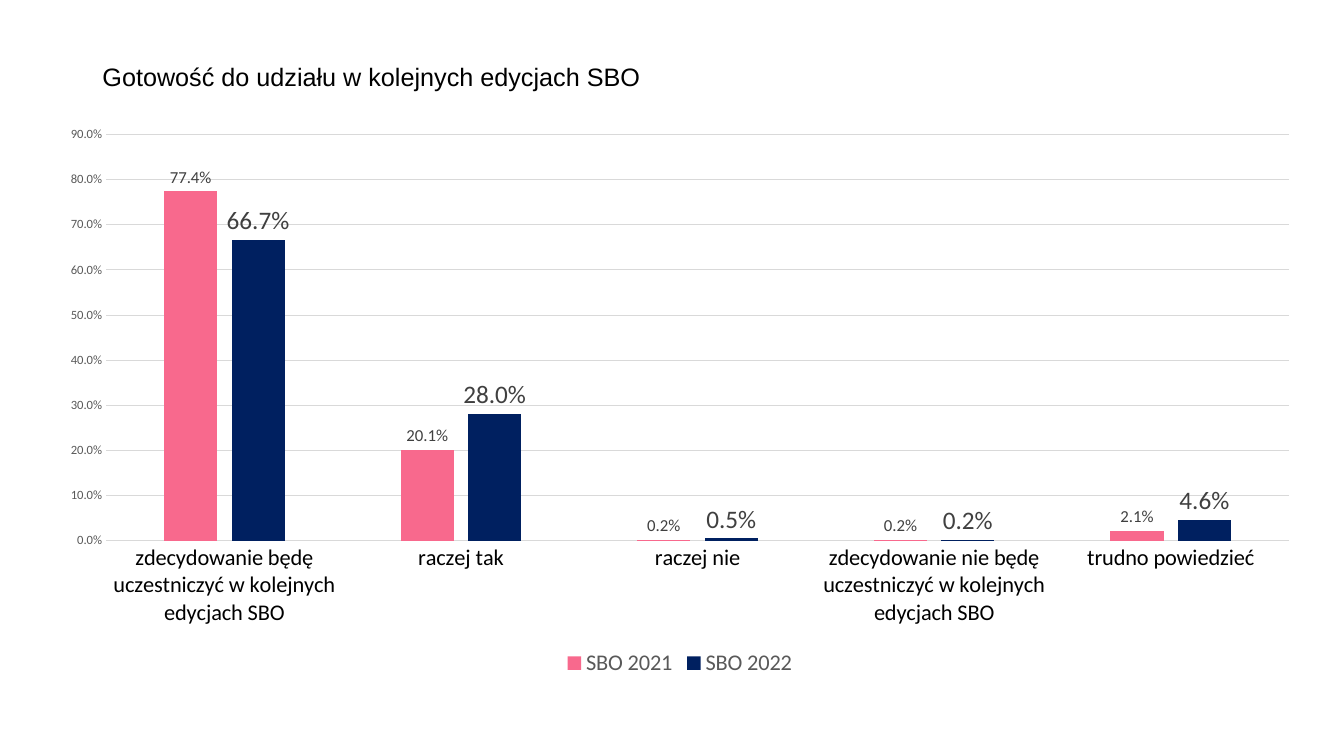
from pptx import Presentation
from pptx.chart.data import CategoryChartData
from pptx.dml.color import RGBColor
from pptx.enum.chart import XL_CHART_TYPE, XL_LABEL_POSITION, XL_LEGEND_POSITION, XL_TICK_MARK
from pptx.enum.text import MSO_ANCHOR, MSO_AUTO_SIZE, PP_ALIGN
from pptx.util import Pt

COLUMNS = XL_CHART_TYPE.COLUMN_CLUSTERED
OUTSIDE = XL_LABEL_POSITION.OUTSIDE_END
BOTTOM = XL_LEGEND_POSITION.BOTTOM
NO_TICK = XL_TICK_MARK.NONE
MIDDLE = MSO_ANCHOR.MIDDLE
NO_FIT = MSO_AUTO_SIZE.NONE
LEFT = PP_ALIGN.LEFT

TITLE = "Gotowość do udziału w kolejnych edycjach SBO"
ANSWERS = [
    "zdecydowanie będę uczestniczyć w kolejnych\nedycjach SBO",
    "raczej tak",
    "raczej nie",
    "zdecydowanie nie będę uczestniczyć w kolejnych\nedycjach SBO",
    "trudno powiedzieć",
]
# name, values, colour, label size
EDITIONS = [
    ("SBO 2021", (0.774, 0.201, 0.002, 0.002, 0.021), "pink", 12),
    ("SBO 2022", (0.667, 0.28, 0.005, 0.002, 0.046), "navy", 18),
]
COLORS = {
    "pink": "F8698D",
    "navy": "002060",
    "black": "000000",
    "label": "404040",
    "muted": "595959",
    "grid": "D9D9D9",
}
PERCENT = "0.0%"
TITLE_BOX = (66, 29, 828, 54)
CHART_BOX = (32.4, 82.8, 906.5, 403.9)


def rgb(name):
    return RGBColor.from_string(COLORS[name])


def style_font(font, size, color, face="Calibri"):
    font.name = face
    font.size = Pt(size)
    font.bold = False
    font.color.rgb = rgb(color)


def style_line(line):
    line.color.rgb = rgb("grid")
    line.width = Pt(0.75)


def add_title(slide):
    sp = slide.shapes.title
    sp.left, sp.top, sp.width, sp.height = map(Pt, TITLE_BOX)
    tf = sp.text_frame
    tf.auto_size = NO_FIT
    tf.vertical_anchor = MIDDLE
    p = tf.paragraphs[0]
    p.alignment = LEFT
    p.line_spacing = 0.9
    r = p.add_run()
    r.text = TITLE
    style_font(r.font, 18, "black", "Arial")


def add_answers_chart(slide):
    data = CategoryChartData(number_format=PERCENT)
    data.categories = ANSWERS
    for name, values, _, _ in EDITIONS:
        data.add_series(name, values)
    chart = slide.shapes.add_chart(COLUMNS, *map(Pt, CHART_BOX), data).chart
    chart.has_title = False
    style_font(chart.font, 10, "black")

    plot = chart.plots[0]
    plot.vary_by_categories = False
    plot.gap_width = 219
    plot.overlap = -27
    for series, (_, _, color, size) in zip(plot.series, EDITIONS):
        series.invert_if_negative = False
        series.format.fill.solid()
        series.format.fill.fore_color.rgb = rgb(color)
        labels = series.data_labels
        labels.show_value = True
        labels.position = OUTSIDE
        labels.number_format = PERCENT
        labels.number_format_is_linked = False
        style_font(labels.font, size, "label")

    answers, shares = chart.category_axis, chart.value_axis
    for axis, size, color in ((answers, 16, "black"), (shares, 9, "muted")):
        axis.major_tick_mark = NO_TICK
        axis.minor_tick_mark = NO_TICK
        style_font(axis.tick_labels.font, size, color)
    style_line(answers.format.line)
    shares.format.line.fill.background()
    shares.minimum_scale, shares.maximum_scale, shares.major_unit = 0, 0.9, 0.1
    shares.tick_labels.number_format = PERCENT
    shares.tick_labels.number_format_is_linked = False
    style_line(shares.major_gridlines.format.line)

    chart.has_legend = True
    chart.legend.position = BOTTOM
    chart.legend.include_in_layout = False
    style_font(chart.legend.font, 16, "muted")


def main():
    prs = Presentation()
    prs.slide_width, prs.slide_height = Pt(960), Pt(540)
    slide = prs.slides.add_slide(prs.slide_layouts[5])
    add_title(slide)
    add_answers_chart(slide)
    prs.save("out.pptx")


if __name__ == "__main__":
    main()
